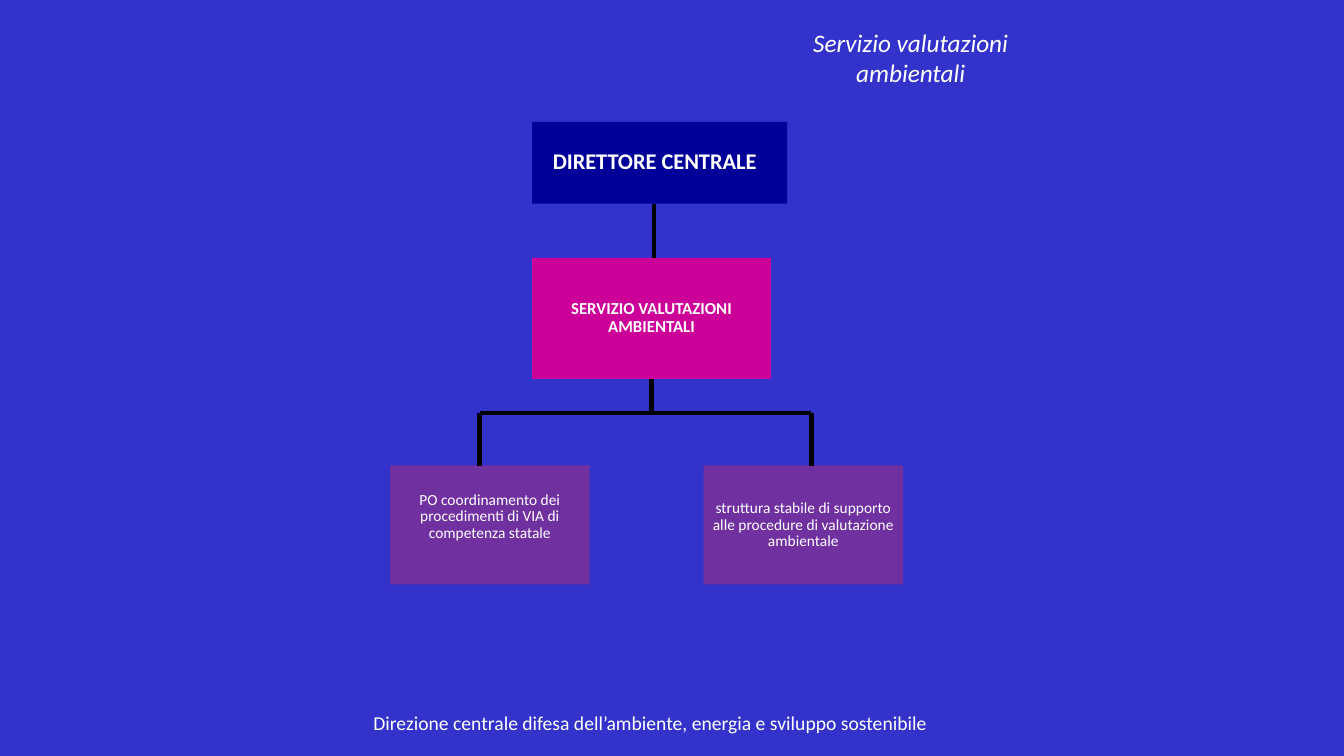
import pptx
import pptx.util
import pptx.dml.color
import pptx.enum.text
import pptx.enum.shapes
import pptx.oxml.ns
import lxml.etree

Cm = pptx.util.Cm
Pt = pptx.util.Pt
Anchor = pptx.enum.text.MSO_ANCHOR


def color(code):
    return pptx.dml.color.RGBColor.from_string(code)


class Chart:
    font = "Calibri"
    ink = "FFFFFF"
    wire = "000000"
    weight = 3.25

    def __init__(self, deck, back):
        self.slide = deck.slides.add_slide(deck.slide_layouts[5])
        fill = self.slide.background.fill
        fill.solid()
        fill.fore_color.rgb = color(back)

    def letter(self, shape, text, size, pads, anchor=Anchor.MIDDLE,
               bold=False, italic=False, lead=1.0):
        frame = shape.text_frame
        frame.word_wrap = True
        frame.auto_size = pptx.enum.text.MSO_AUTO_SIZE.NONE
        frame.vertical_anchor = anchor
        left, top, right, bottom = pads
        frame.margin_left, frame.margin_top = Cm(left), Cm(top)
        frame.margin_right, frame.margin_bottom = Cm(right), Cm(bottom)
        para = frame.paragraphs[0]
        para.text = text
        para.alignment = pptx.enum.text.PP_ALIGN.CENTER
        para.line_spacing = lead
        para.font.name = self.font
        para.font.size = Pt(size)
        para.font.bold = bold
        para.font.italic = italic
        para.font.color.rgb = color(self.ink)

    def title(self, text, left, top, width, height):
        shape = self.slide.shapes.title
        shape.left, shape.top = Cm(left), Cm(top)
        shape.width, shape.height = Cm(width), Cm(height)
        self.letter(shape, text, 18, (0.25, 0.13, 0.25, 0.13), Anchor.TOP, italic=True)

    def label(self, text, left, top, width, height):
        shape = self.slide.shapes.add_textbox(Cm(left), Cm(top), Cm(width), Cm(height))
        self.letter(shape, text, 14, (0, 0, 0, 0))

    def box(self, text, left, top, width, height, fill, size,
            bold=False, right=0.03, bottom=0.03):
        shape = self.slide.shapes.add_shape(
            pptx.enum.shapes.MSO_SHAPE.RECTANGLE,
            Cm(left), Cm(top), Cm(width), Cm(height))
        shape.shadow.inherit = False
        shape.fill.solid()
        shape.fill.fore_color.rgb = color(fill)
        shape.line.fill.background()
        self.letter(shape, text, size, (0.03, 0.03, right, bottom), bold=bold, lead=0.9)
        return shape

    def line(self, x1, y1, x2, y2):
        wire = self.slide.shapes.add_connector(
            pptx.enum.shapes.MSO_CONNECTOR.STRAIGHT, Cm(x1), Cm(y1), Cm(x2), Cm(y2))
        wire.line.color.rgb = color(self.wire)
        wire.line.width = Pt(self.weight)
        lxml.etree.SubElement(wire._element.spPr, pptx.oxml.ns.qn("a:effectLst"))
        return wire


def main():
    deck = pptx.Presentation()
    deck.slide_width, deck.slide_height = Cm(33.87), Cm(19.05)
    chart = Chart(deck, "3333CC")
    chart.title("Servizio valutazioni ambientali", 19.05, 0.56, 7.8, 1.85)

    chart.box("DIRETTORE CENTRALE", 13.41, 3.07, 6.43, 2.06, "000099", 16,
              bold=True, right=0.28)
    office = chart.box("SERVIZIO VALUTAZIONI AMBIENTALI", 13.41, 6.5, 6.02, 3.05,
                       "CC0099", 12, bold=True)
    chart.line(16.48, 5.13, 16.48, 6.5)

    rail, row = 10.41, 11.73
    stem = chart.line(16.42, 9.55, 16.42, rail)
    stem.begin_connect(office, 2)

    units = [
        ("PO coordinamento dei procedimenti di VIA di competenza statale",
         9.83, 12.09, 0.45),
        ("struttura stabile di supporto alle procedure di valutazione ambientale",
         17.73, 20.45, 0.03),
    ]
    for text, left, drop, bottom in units:
        chart.box(text, left, row, 5.03, 3, "7030A0", 11, bottom=bottom)
        chart.line(drop, rail, drop, row)
    chart.line(units[0][2], rail, units[1][2], rail)

    chart.label("Direzione centrale difesa dell’ambiente, energia e sviluppo sostenibile",
                4.39, 17.91, 24, 0.61)
    deck.save("out.pptx")


if __name__ == "__main__":
    main()
